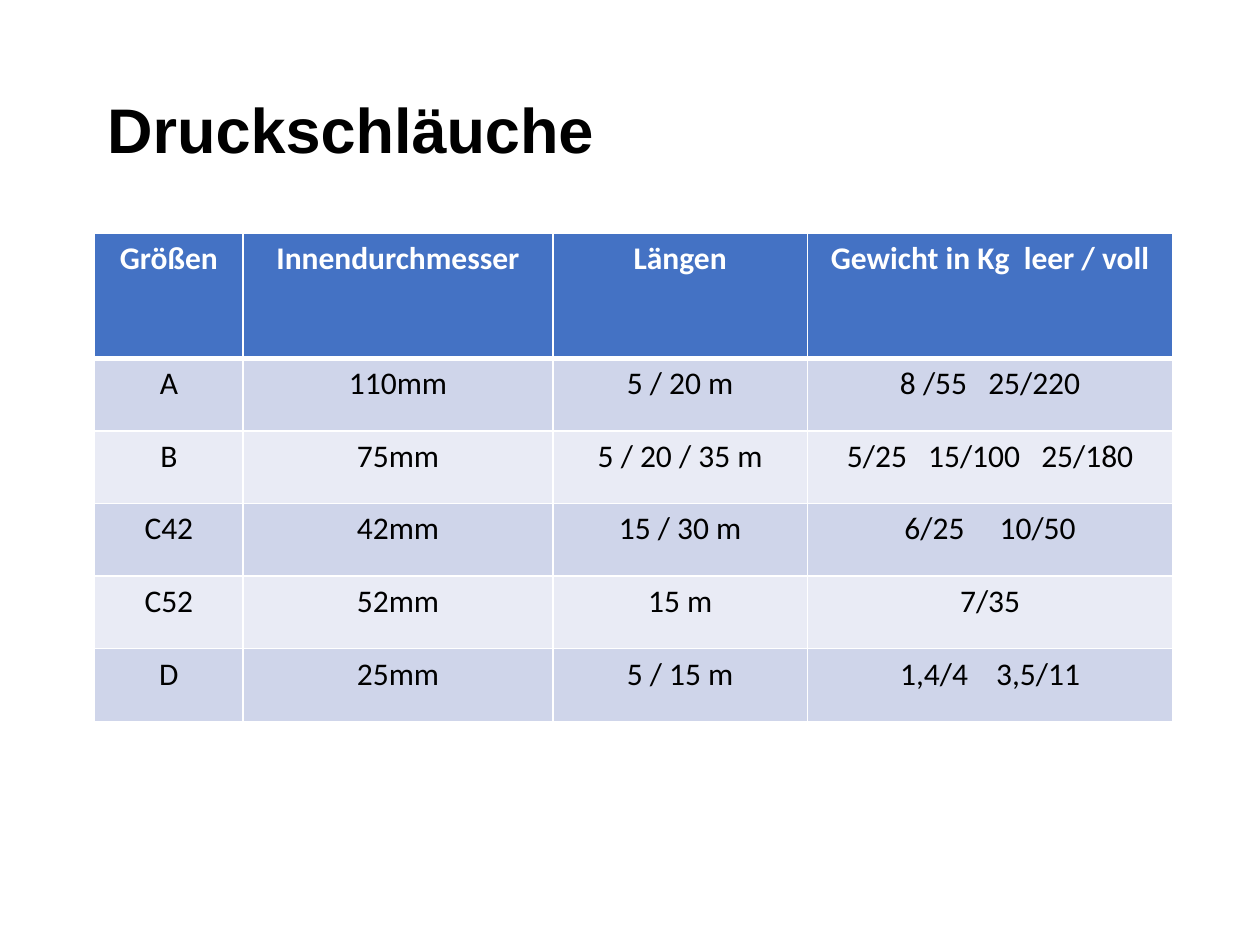
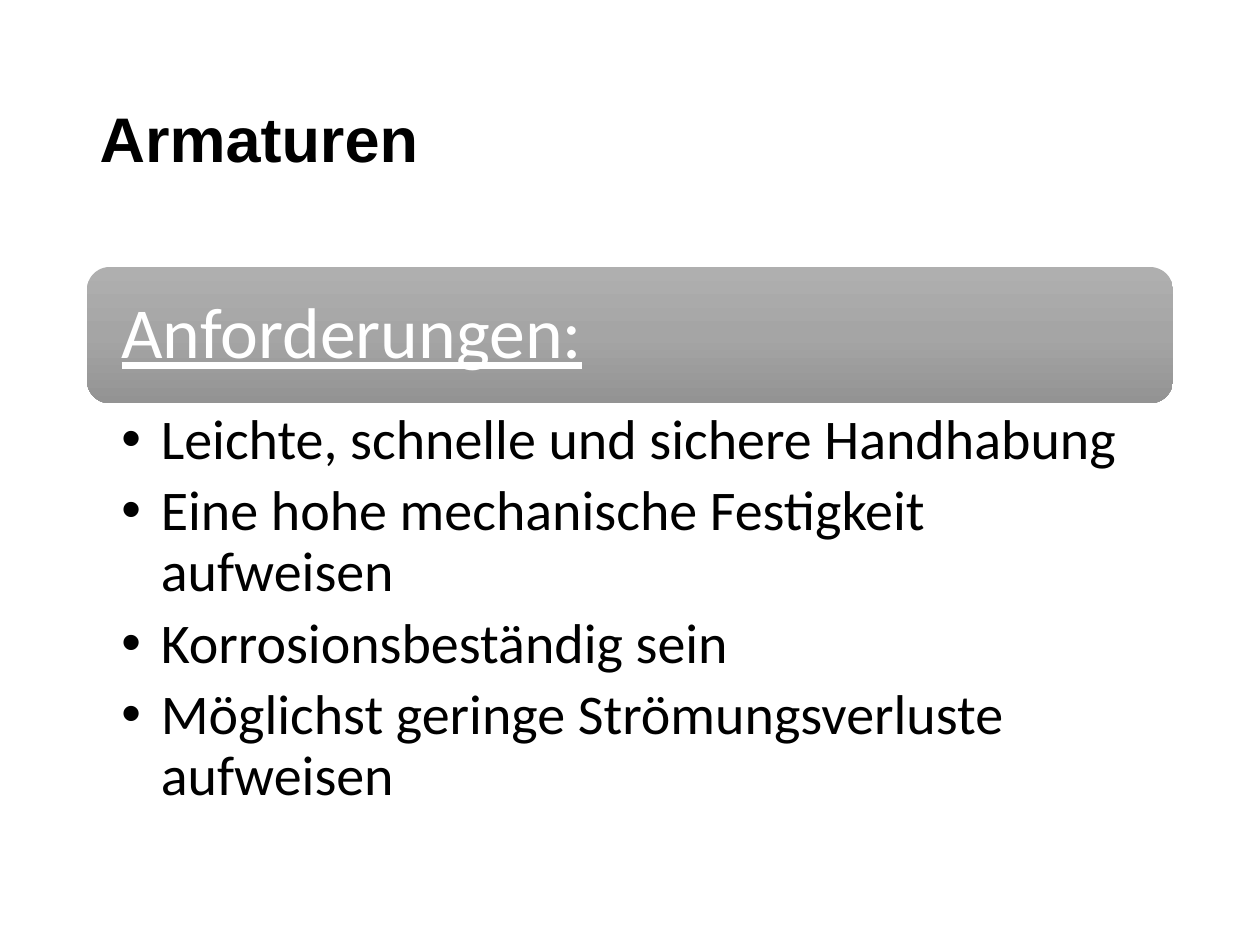
"""Build two slides on fire hoses and fittings: a size table and a list of requirements."""
from copy import deepcopy

from lxml import etree
from pptx import Presentation
from pptx.dml.color import RGBColor
from pptx.enum.shapes import MSO_SHAPE
from pptx.enum.text import MSO_ANCHOR, MSO_AUTO_SIZE, PP_ALIGN
from pptx.oxml.ns import qn
from pptx.util import Pt

LEFT, CENTER = PP_ALIGN.LEFT, PP_ALIGN.CENTER
MIDDLE, TOP = MSO_ANCHOR.MIDDLE, MSO_ANCHOR.TOP
NO_FIT = MSO_AUTO_SIZE.NONE
ROUNDED = MSO_SHAPE.ROUNDED_RECTANGLE

BLACK = RGBColor(0x00, 0x00, 0x00)
WHITE = RGBColor(0xFF, 0xFF, 0xFF)
BLUE = RGBColor(0x44, 0x72, 0xC4)
BAND_DARK = RGBColor(0xCF, 0xD5, 0xEA)
BAND_LIGHT = RGBColor(0xE9, 0xEB, 0xF5)
GREYS = [RGBColor(0xAF, 0xAF, 0xAF), RGBColor(0xA5, 0xA5, 0xA5), RGBColor(0x93, 0x93, 0x93)]


def add_text(p, text, size=18, font="Calibri", color=BLACK, bold=False, underline=False,
             align=LEFT, line=1.0, after=0, gap=0):
    """Add a formatted run; a gap in points widens its letter spacing."""
    p.alignment, p.line_spacing = align, line
    p.space_before, p.space_after = Pt(0), Pt(after)
    r = p.add_run()
    r.text = text
    r.font.size, r.font.name, r.font.color.rgb = Pt(size), font, color
    r.font.bold, r.font.underline = bold, underline
    if gap:
        r.font._element.set("spc", str(gap * 100))


def add_slide(layout, title, left, top):
    """Add a slide with the shared title style."""
    s = prs.slides.add_slide(prs.slide_layouts[layout])
    sp = s.shapes.title
    sp.left, sp.top, sp.width, sp.height = Pt(left), Pt(top), Pt(620.6), Pt(104.4)
    tf = sp.text_frame
    tf.auto_size, tf.vertical_anchor = NO_FIT, MIDDLE
    add_text(tf.paragraphs[0], title, size=36, font="Arial", bold=True, line=0.9)
    return s


prs = Presentation()
prs.slide_width, prs.slide_height = Pt(720), Pt(540)

s = add_slide(5, "Druckschläuche", 54, 23.8)
rows = [
    ("Größen", "Innendurchmesser", "Längen", ["Gewicht in Kg", "leer / voll"], 4),
    ("A", "110mm", "5 / 20 m", ["8 /55", "25/220"], 8),
    ("B", "75mm", "5 / 20 / 35 m", ["5/25", "15/100", "25/180"], 8),
    ("C42", "42mm", "15 / 30 m", ["6/25", "10/50"], 16),
    ("C52", "52mm", "15 m", ["7/35"], 0),
    ("D", "25mm", "5 / 15 m", ["1,4/4", "3,5/11"], 12),
]
widths = [85, 177, 145.4, 208.8]
heights = [71.3] + [41.5] * 5
table = s.shapes.add_table(len(rows), len(widths), Pt(54), Pt(133.4),
                           Pt(sum(widths)), Pt(sum(heights))).table
for column, width in zip(table.columns, widths):
    column.width = Pt(width)
for i, (*texts, weights, gap) in enumerate(rows):
    table.rows[i].height = Pt(heights[i])
    fill = BLUE if i == 0 else BAND_DARK if i % 2 else BAND_LIGHT
    style = dict(color=BLACK if i else WHITE, bold=i == 0, align=CENTER)
    for j, parts in enumerate([[text] for text in texts] + [weights]):
        cell = table.cell(i, j)
        tcPr = cell._tc.get_or_add_tcPr()
        for side in "LRTB":
            thick = (i, side) in [(0, "B"), (1, "T")]
            ln = etree.SubElement(tcPr, qn(f"a:ln{side}"), w=str(Pt(3 if thick else 1)))
            solid = etree.SubElement(ln, qn("a:solidFill"))
            etree.SubElement(solid, qn("a:srgbClr"), val=str(WHITE))
        cell.fill.solid()
        cell.fill.fore_color.rgb = fill
        p = cell.text_frame.paragraphs[0]
        for k, part in enumerate(parts):
            if k:
                add_text(p, " ", gap=gap, **style)
            add_text(p, part, **style)

s = add_slide(1, "Armaturen", 49.7, 28.8)
sp = s.shapes.add_shape(ROUNDED, Pt(49.7), Pt(152.6), Pt(620.6), Pt(77.8))
sp.shadow.inherit = False
sp.line.fill.background()
sp.fill.gradient()
sp.fill.gradient_angle = 270
stops = sp.element.spPr.find(".//" + qn("a:gsLst"))
stops.insert(1, deepcopy(stops[0]))
for i, stop in enumerate(sp.fill.gradient_stops):
    stop.position, stop.color.rgb = i / 2, GREYS[i]
tf = sp.text_frame
tf.word_wrap, tf.vertical_anchor = True, MIDDLE
tf.margin_left = tf.margin_right = Pt(16)
add_text(tf.paragraphs[0], "Anforderungen:", size=41, color=WHITE, underline=True, line=0.9)

requirements = [
    "Leichte, schnelle und sichere Handhabung",
    "Eine hohe mechanische Festigkeit aufweisen",
    "Korrosionsbeständig sein",
    "Möglichst geringe Strömungsverluste aufweisen",
]
sp = s.placeholders[1]
sp.left, sp.top, sp.width, sp.height = Pt(49.7), Pt(230.4), Pt(620.6), Pt(247)
tf = sp.text_frame
tf.auto_size, tf.vertical_anchor, tf.word_wrap = NO_FIT, TOP, True
tf.margin_left, tf.margin_right = Pt(19.7), Pt(23)
tf.margin_top = tf.margin_bottom = Pt(4.3)
for i, requirement in enumerate(requirements):
    p = tf.add_paragraph() if i else tf.paragraphs[0]
    pPr = p._p.get_or_add_pPr()
    pPr.set("marL", str(Pt(22.5)))
    pPr.set("indent", str(Pt(-22.5)))
    etree.SubElement(pPr, qn("a:buChar"), char="•")
    add_text(p, requirement, size=32, line=0.9, after=6.4)

prs.save("out.pptx")
